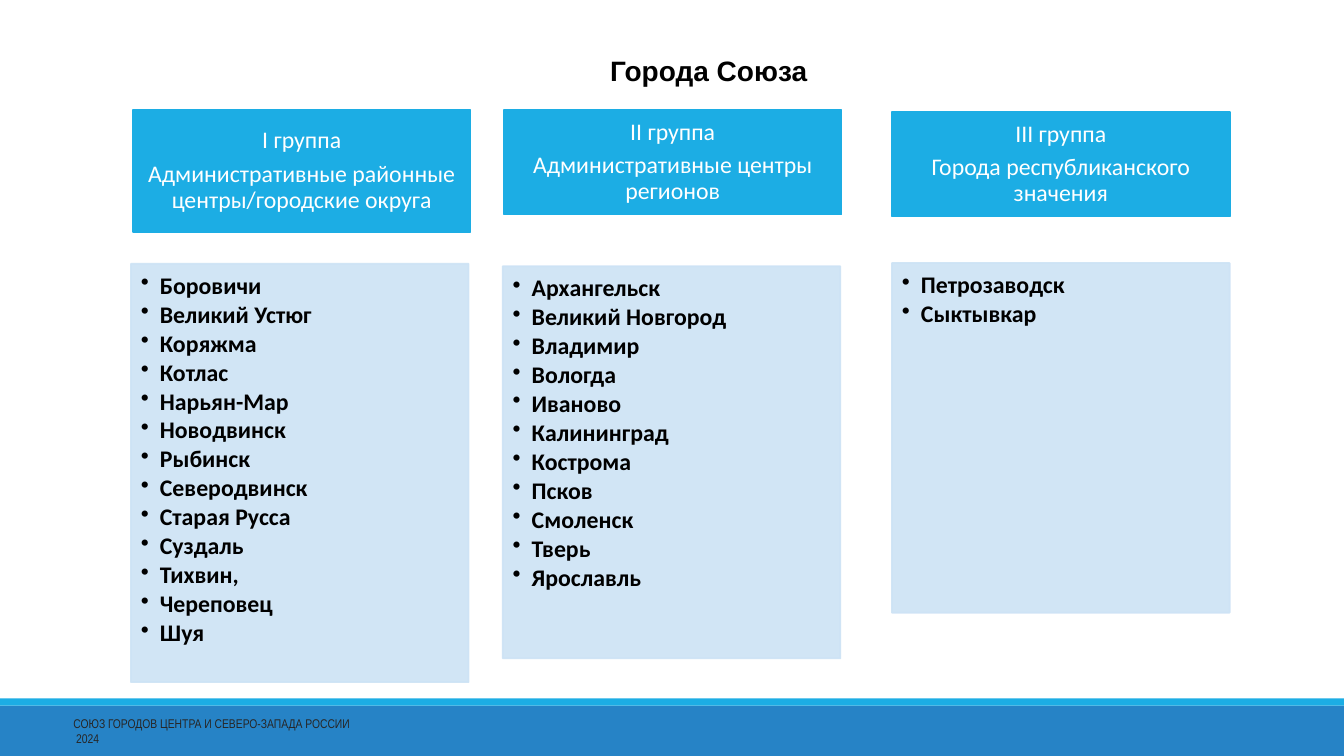
import pptx
import pptx.dml.color
import pptx.enum.shapes
import pptx.enum.text
import pptx.oxml
import pptx.oxml.ns
import pptx.util
from pptx.util import Cm


def color(code):
    return pptx.dml.color.RGBColor.from_string(code)


class Board:
    """Holds the style and the slide, and draws each kind of element."""

    blue, sky, pale = "2683C6", "1CADE4", "CDE3F5"
    black, white, gray = "000000", "FFFFFF", "262626"
    align = pptx.enum.text.PP_ALIGN
    anchor = pptx.enum.text.MSO_ANCHOR

    def __init__(self, slide):
        self.slide = slide

    def rect(self, place, fill, edge=None, alpha=None):
        kind = pptx.enum.shapes.MSO_SHAPE.RECTANGLE
        shape = self.slide.shapes.add_shape(kind, *map(Cm, place))
        shape.shadow.inherit = False
        shape.fill.solid()
        shape.fill.fore_color.rgb = color(fill)
        if edge:
            shape.line.color.rgb = color(fill)
            shape.line.width = pptx.util.Pt(edge)
        else:
            shape.line.fill.background()
        if alpha:
            for tone in shape.element.spPr.iter(pptx.oxml.ns.qn("a:srgbClr")):
                tone.append(pptx.oxml.parse_xml(
                    f'<a:alpha {pptx.oxml.ns.nsdecls("a")} val="{alpha * 1000}"/>'))
        return shape

    def text(self, shape, lines, size, ink, face="Calibri", bold=False,
             align=None, anchor=None, inset=None, after=0, lead=1, dot=False):
        frame = shape.text_frame
        frame.word_wrap = True
        frame.vertical_anchor = anchor or self.anchor.TOP
        if inset:
            (frame.margin_left, frame.margin_top,
             frame.margin_right, frame.margin_bottom) = map(Cm, inset)
        frame.text = "\n".join(lines)
        for para in frame.paragraphs:
            para.alignment = align or self.align.LEFT
            para.line_spacing = lead
            para.space_after = pptx.util.Pt(after)
            if dot:
                self.bullet(para)
            font = para.font
            font.name, font.size, font.bold = face, pptx.util.Pt(size), bold
            font.color.rgb = color(ink)
        return frame

    def bullet(self, para):
        props = para._p.get_or_add_pPr()
        props.set("marL", str(Cm(0.48)))
        props.set("indent", str(-Cm(0.48)))
        props.append(pptx.oxml.parse_xml(
            f'<a:buChar {pptx.oxml.ns.nsdecls("a")} char="•"/>'))

    def label(self, place, lines, **style):
        box = self.slide.shapes.add_textbox(*map(Cm, place))
        return self.text(box, lines, **style)

    def header(self, place, lines):
        self.text(self.rect(place, self.sky, 1.25), lines, 17, self.white,
                  align=self.align.CENTER, anchor=self.anchor.MIDDLE,
                  inset=(0.33, 0.2, 0.33, 0.2), after=5.7, lead=0.9)

    def panel(self, place, towns):
        self.text(self.rect(place, self.pale, 1.25, 90), towns, 17, self.black,
                  bold=True, inset=(0.25, 0.25, 0.33, 0.38), after=2.3,
                  lead=0.9, dot=True)


def main():
    deck = pptx.Presentation()
    deck.slide_width, deck.slide_height = Cm(33.87), Cm(19.05)
    board = Board(deck.slides.add_slide(deck.slide_layouts[6]))

    board.rect((0, 17.78, 33.87, 1.27), board.blue)
    board.rect((0, 17.6, 33.87, 0.18), board.sky)
    board.label((1.6, 17.91, 13.39, 1.02),
                ["СОЮЗ ГОРОДОВ ЦЕНТРА И СЕВЕРО-ЗАПАДА РОССИИ", " 2024"],
                size=9, ink=board.gray, face="Arial Narrow",
                anchor=board.anchor.MIDDLE)
    title = board.label((15.09, 1.22, 5.74, 1.12), ["Города Союза "], size=20,
                        ink=board.black, face="Arial", bold=True,
                        align=board.align.CENTER)
    title.word_wrap = False

    width = 8.51
    groups = [
        ((3.35, 2.77, width, 3.07),
         ["I группа", "Административные районные центры/городские округа"],
         (3.3, 6.65, width, 10.54),
         ["Боровичи", "Великий Устюг", "Коряжма", "Котлас", "Нарьян-Мар",
          "Новодвинск", "Рыбинск", "Северодвинск", "Старая Русса", "Суздаль",
          "Тихвин,", "Череповец", "Шуя"]),
        ((12.7, 2.77, width, 2.64),
         ["II группа", "Административные центры регионов"],
         (12.67, 6.71, width, 9.88),
         ["Архангельск", "Великий Новгород", "Владимир", "Вологда", "Иваново",
          "Калининград", "Кострома", "Псков", "Смоленск", "Тверь", "Ярославль"]),
        ((22.48, 2.82, width, 2.64),
         ["III группа", "Города республиканского значения"],
         (22.48, 6.63, width, 8.81),
         ["Петрозаводск", "Сыктывкар"]),
    ]
    for top, heading, body, towns in groups:
        board.header(top, heading)
        board.panel(body, towns)

    deck.save("out.pptx")


if __name__ == "__main__":
    main()
